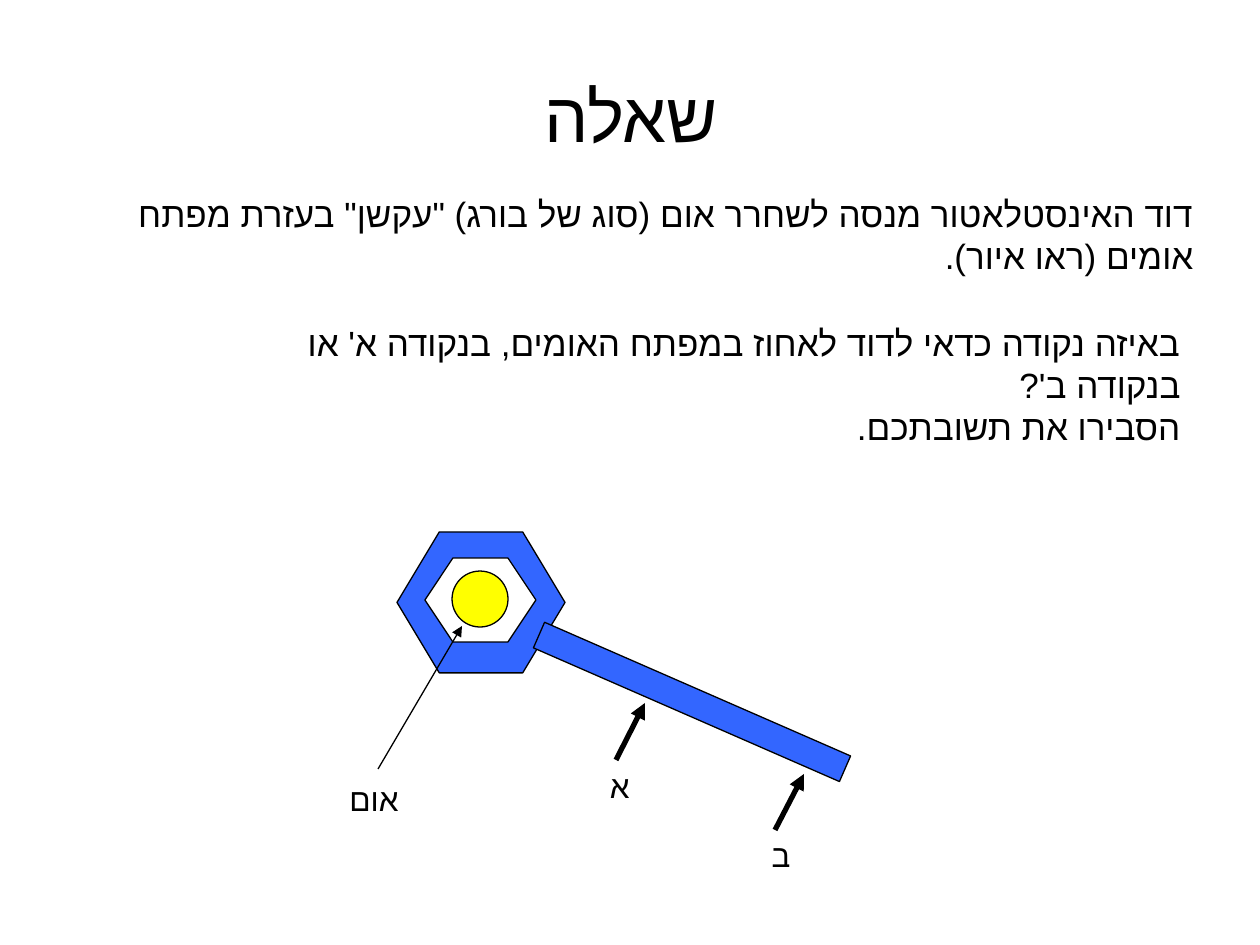
import pptx
import pptx.dml.color
import pptx.enum.shapes
import pptx.enum.text
import pptx.oxml.ns
import pptx.util
from lxml import etree

PX = 914400 / 126
SHAPE = pptx.enum.shapes.MSO_SHAPE
ALIGN = pptx.enum.text.PP_ALIGN
ANCHOR = pptx.enum.text.MSO_ANCHOR
BLACK, BLUE, YELLOW, WHITE = "000000", "3366FF", "FFFF00", "FFFFFF"


def px(n):
    """Turn pixels into EMU."""
    return pptx.util.Emu(round(n * PX))


def color(value):
    """Turn a hex string into a colour."""
    return pptx.dml.color.RGBColor.from_string(value)


def apply(obj, values):
    """Set each attribute named in a dict of format values."""
    for name, value in values.items():
        setattr(obj, name, value)


def sub(parent, tag, **attrs):
    """Append an XML element to its parent."""
    return etree.SubElement(parent, pptx.oxml.ns.qn(tag), attrs)


def add_text(s, box, lines, size, align=ALIGN.RIGHT, anchor=ANCHOR.TOP):
    """Place right-to-left paragraphs in a box."""
    tf = s.shapes.add_textbox(*map(px, box)).text_frame
    apply(tf, {"word_wrap": True, "vertical_anchor": anchor})
    for i, line in enumerate(lines):
        p = tf.paragraphs[0] if i == 0 else tf.add_paragraph()
        p.alignment = align
        p._p.get_or_add_pPr().set("rtl", "1")
        r = p.add_run()
        r.text = line
        apply(r.font, {"size": pptx.util.Pt(size), "name": "Arial"})
        r.font.color.rgb = color(BLACK)
        sub(r._r.get_or_add_rPr(), "a:cs", typeface="Arial")


def add_part(s, kind, box, fill, rotation=0, adj=None):
    """Place a filled, thinly outlined shape."""
    sp = s.shapes.add_shape(kind, *map(px, box))
    sp.shadow.inherit = False
    sp.rotation = rotation
    if adj is not None:
        sp.adjustments[0] = adj
    sp.fill.solid()
    sp.fill.fore_color.rgb = color(fill)
    sp.line.color.rgb = color(BLACK)
    sp.line.width = pptx.util.Pt(0.75)


def add_arrow(s, start, end, width):
    """Draw a straight arrow from start to end."""
    kind = pptx.enum.shapes.MSO_CONNECTOR.STRAIGHT
    sp = s.shapes.add_connector(kind, *map(px, start + end))
    sp.line.color.rgb = color(BLACK)
    sp.line.width = pptx.util.Pt(width)
    sub(sp.line._get_or_add_ln(), "a:tailEnd", type="triangle")
    sub(sp._element.spPr, "a:effectLst")


def add_wrench(s, x, y):
    """Draw the wrench, its nut and the labelled arrows from a top-left corner."""
    parts = [
        (SHAPE.HEXAGON, (154, 0, 168, 141), BLUE, 0, 0.3),
        (SHAPE.RECTANGLE, (282, 156, 334, 28), BLUE, 23.6, None),
        (SHAPE.HEXAGON, (182, 26, 111, 84), WHITE, 0, 0.333),
        (SHAPE.OVAL, (209, 39, 56, 56), YELLOW, 0, None),
    ]
    for kind, (left, top, w, h), fill, rotation, adj in parts:
        add_part(s, kind, (x + left, y + top, w, h), fill, rotation, adj)
    pointers = [
        ("א", (373, 228), (402, 171), 3, (315, 229, 84, 57)),
        ("ב", (532, 298), (561, 242), 3, (476, 298, 84, 57)),
        ("אום", (135, 237), (219, 94), 0.75, (0, 242, 168, 86)),
    ]
    for label, (x1, y1), (x2, y2), width, (left, top, w, h) in pointers:
        add_arrow(s, (x + x1, y + y1), (x + x2, y + y2), width)
        add_text(s, (x + left, y + top, w, h), [label], 18)


def add_question(s, x, y):
    """Place the title and the two text blocks from a top-left corner."""
    add_text(s, (x + 31, y, 1134, 158), ["שאלה"], 40, ALIGN.CENTER, ANCHOR.MIDDLE)
    add_text(s, (x, y + 151, 1173, 139), [
        "דוד האינסטלאטור מנסה לשחרר אום (סוג של בורג) \"עקשן\" בעזרת מפתח אומים (ראו איור).",
    ], 20)
    add_text(s, (x + 160, y + 259, 1000, 180), [
        "באיזה נקודה כדאי לדוד לאחוז במפתח האומים, בנקודה א' או בנקודה ב'?",
        "הסבירו את תשובתכם.",
    ], 20, anchor=ANCHOR.MIDDLE)


def main():
    """Build and save the slide."""
    prs = pptx.Presentation()
    apply(prs, {"slide_width": px(1260), "slide_height": px(945)})
    s = prs.slides.add_slide(prs.slide_layouts[6])
    add_question(s, 33, 35)
    add_wrench(s, 243, 532)
    prs.save("out.pptx")


if __name__ == "__main__":
    main()
